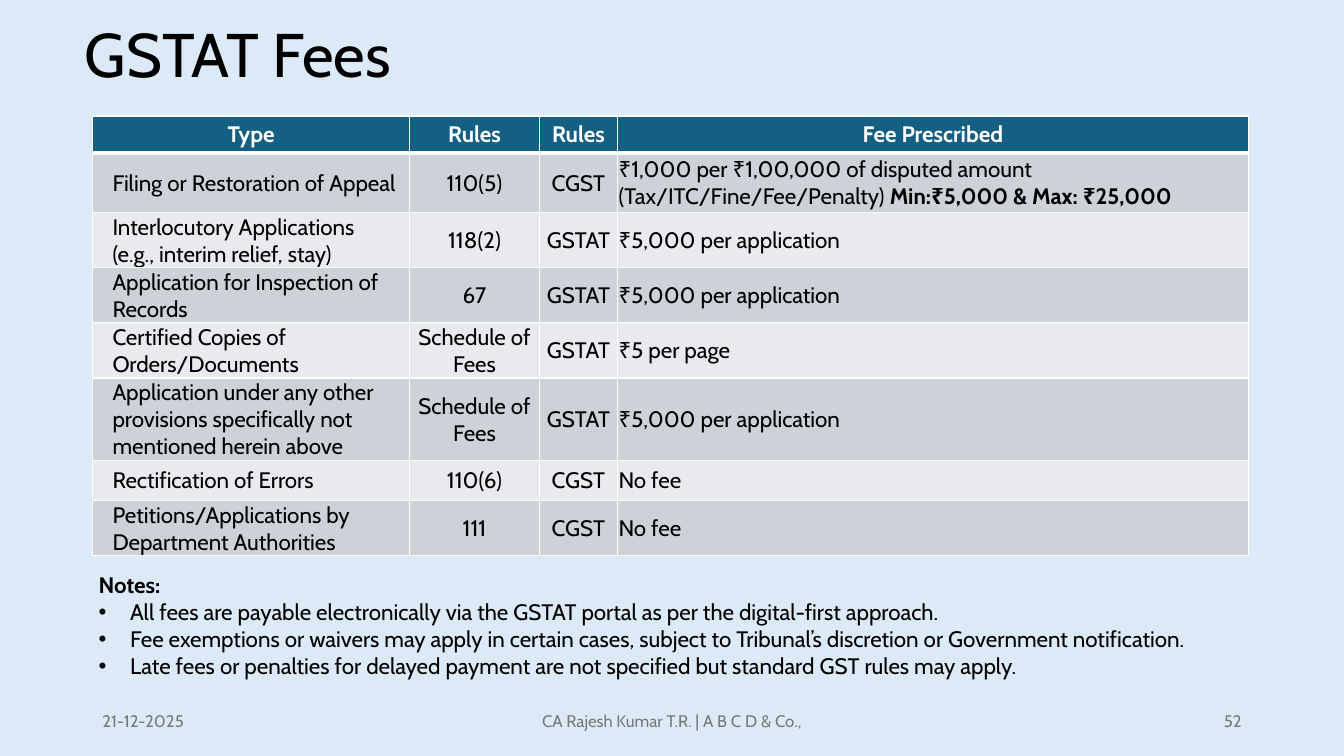
import pptx
import pptx.dml.color
import pptx.enum.text
import pptx.oxml
import pptx.oxml.ns
import pptx.util

Pt = pptx.util.Pt
ALIGN = pptx.enum.text.PP_ALIGN
ANCHOR = pptx.enum.text.MSO_ANCHOR
FONT = "Cabin"
BLACK, WHITE, GREY = "000000", "FFFFFF", "797979"
BACKGROUND, HEADER_FILL = "DCEAF7", "156082"
BAND_FILLS = ["CCD2D8", "E8EAED"]

TITLE = "GSTAT Fees"
HEADER = ("Type", "Rules", "Rules", "Fee Prescribed")
# A cell is a list of paragraphs; a paragraph is a list of (text, bold) spans.
FEES = [
    ("Filing or Restoration of Appeal", "110(5)", "CGST",
     [[("₹1,000 per ₹1,00,000 of disputed amount (Tax/ITC/Fine/Fee/Penalty) ", False),
       ("Min:₹5,000 & Max: ₹25,000", True)]]),
    ([[("Interlocutory Applications", False)], [("(e.g., interim relief, stay)", False)]],
     "118(2)", "GSTAT", "₹5,000 per application"),
    ("Application for Inspection of Records", "67", "GSTAT", "₹5,000 per application"),
    ("Certified Copies of Orders/Documents", "Schedule of Fees", "GSTAT", "₹5 per page"),
    ("Application under any other provisions specifically not mentioned herein above",
     "Schedule of Fees", "GSTAT", "₹5,000 per application"),
    ("Rectification of Errors", "110(6)", "CGST", "No fee"),
    ("Petitions/Applications by Department Authorities", "111", "CGST", "No fee"),
]
COLUMN_WIDTHS = [226.5, 92.5, 56, 450.5]
ROW_HEIGHTS = [26.6, 42.5, 33.8, 28.8, 28.8, 56.9, 28.8, 33.8]
NOTES_HEADING = "Notes:"
NOTES = [
    "All fees are payable electronically via the GSTAT portal as per the digital-first approach.",
    "Fee exemptions or waivers may apply in certain cases, subject to Tribunal’s discretion "
    "or Government notification.",
    "Late fees or penalties for delayed payment are not specified but standard GST rules may apply.",
]
# Footer: text, left, width, alignment
FOOTER = [
    ("21-12-2025", 66, 216, ALIGN.LEFT),
    ("CA Rajesh Kumar T.R. | A B C D & Co.,", 318, 324, ALIGN.CENTER),
    ("52", 678, 216, ALIGN.RIGHT),
]


def rgb(value):
    return pptx.dml.color.RGBColor.from_string(value)


def add_span(para, text, size, color, bold=False):
    span = para.add_run()
    span.text = text
    span.font.name = FONT
    span.font.size = Pt(size)
    span.font.bold = bold
    span.font.color.rgb = rgb(color)


def add_paragraph(frame, first):
    return frame.paragraphs[0] if first else frame.add_paragraph()


def add_text_box(page, left, top, width, height, anchor):
    box = page.shapes.add_textbox(Pt(left), Pt(top), Pt(width), Pt(height))
    box.text_frame.word_wrap = True
    box.text_frame.vertical_anchor = anchor
    return box.text_frame


def set_indent(para, margin, first_line=0):
    properties = para._p.get_or_add_pPr()
    properties.set("marL", str(Pt(margin)))
    properties.set("indent", str(Pt(first_line)))
    return properties


def set_borders(cell, widths):
    """Draw white borders; widths maps L, R, T and B to points."""
    properties = cell._tc.get_or_add_tcPr()
    for side, width in widths.items():
        properties.append(pptx.oxml.parse_xml(
            f'<a:ln{side} {pptx.oxml.ns.nsdecls("a")} w="{Pt(width)}">'
            f'<a:solidFill><a:srgbClr val="{WHITE}"/></a:solidFill></a:ln{side}>'))


def fill_cell(cell, content, row, column):
    is_header = row == 0
    cell.margin_left = cell.margin_top = cell.margin_right = Pt(0.7)
    cell.margin_bottom = Pt(0)
    cell.vertical_anchor = ANCHOR.MIDDLE
    set_borders(cell, {"L": 1, "R": 1, "T": 3 if row == 1 else 1, "B": 3 if is_header else 1})
    cell.fill.solid()
    cell.fill.fore_color.rgb = rgb(HEADER_FILL if is_header else BAND_FILLS[(row - 1) % 2])
    if isinstance(content, str):
        content = [[(content, is_header)]]
    for index, spans in enumerate(content):
        para = add_paragraph(cell.text_frame, index == 0)
        para.alignment = ALIGN.CENTER if is_header or column in (1, 2) else ALIGN.LEFT
        if column == 0 and not is_header:
            set_indent(para, 13.5)
        for text, bold in spans:
            add_span(para, text, 16, WHITE if is_header else BLACK, bold)


def add_title(page):
    title = page.shapes.title
    title.left, title.top, title.width, title.height = Pt(53.3), Pt(-10.8), Pt(676.8), Pt(103.7)
    title.text_frame.vertical_anchor = ANCHOR.MIDDLE
    para = title.text_frame.paragraphs[0]
    para.alignment = ALIGN.LEFT
    para.line_spacing = 0.9
    add_span(para, TITLE, 44, BLACK)


def add_fee_table(page):
    rows = [HEADER] + FEES
    table = page.shapes.add_table(len(rows), len(HEADER), Pt(66.2), Pt(82.8),
                                  Pt(sum(COLUMN_WIDTHS)), Pt(sum(ROW_HEIGHTS))).table
    for column, width in zip(table.columns, COLUMN_WIDTHS):
        column.width = Pt(width)
    for row, height in zip(table.rows, ROW_HEIGHTS):
        row.height = Pt(height)
    for row, contents in enumerate(rows):
        for column, content in enumerate(contents):
            fill_cell(table.cell(row, column), content, row, column)


def add_notes(page):
    frame = add_text_box(page, 63.4, 404.6, 828, 85, ANCHOR.TOP)
    add_span(frame.paragraphs[0], NOTES_HEADING, 16, BLACK, True)
    for note in NOTES:
        para = frame.add_paragraph()
        properties = set_indent(para, 22.5, -22.5)
        namespace = pptx.oxml.ns.nsdecls("a")
        properties.append(pptx.oxml.parse_xml(f'<a:buFont {namespace} typeface="Arial"/>'))
        properties.append(pptx.oxml.parse_xml(f'<a:buChar {namespace} char="•"/>'))
        add_span(para, note, 16, BLACK)


def add_footer(page):
    for text, left, width, alignment in FOOTER:
        para = add_text_box(page, left, 500.4, width, 28.8, ANCHOR.MIDDLE).paragraphs[0]
        para.alignment = alignment
        add_span(para, text, 12, GREY)


def main():
    deck = pptx.Presentation()
    deck.slide_width, deck.slide_height = Pt(960), Pt(540)
    page = deck.slides.add_slide(deck.slide_layouts.get_by_name("Title Only"))
    page.background.fill.solid()
    page.background.fill.fore_color.rgb = rgb(BACKGROUND)
    add_title(page)
    add_fee_table(page)
    add_footer(page)
    add_notes(page)
    deck.save("out.pptx")


if __name__ == "__main__":
    main()
